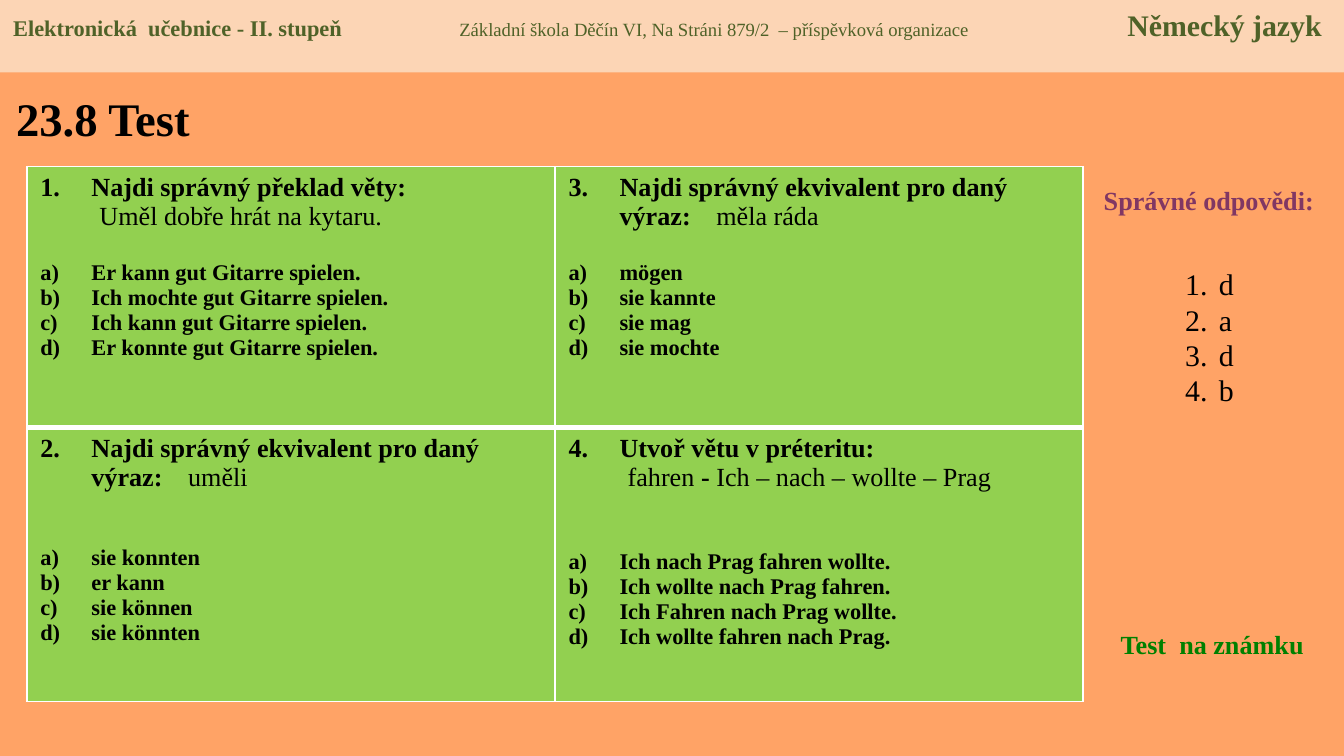
from lxml import etree
from pptx import Presentation
from pptx.dml.color import RGBColor
from pptx.enum.shapes import MSO_SHAPE
from pptx.enum.text import MSO_ANCHOR, PP_ALIGN
from pptx.oxml.ns import qn
from pptx.util import Inches, Pt

RECT = MSO_SHAPE.RECTANGLE
TOP, MID = MSO_ANCHOR.TOP, MSO_ANCHOR.MIDDLE
LEFT, CENTER = PP_ALIGN.LEFT, PP_ALIGN.CENTER

# Content
TITLE = "23.8 Test"
HEAD = ["Elektronická  učebnice - II. stupeň",
        "\tZákladní škola Děčín VI, Na Stráni 879/2  – příspěvková organizace",
        "\tNěmecký jazyk"]
KEY_HEAD = "Správné odpovědi:"
KEY = ["d", "a", "d", "b"]
NOTE = "Test  na známku"

# Each task: number, question, runs after it as (text, bold), on a new line,
# gap before the options in points, options
TASKS = [
    [(1, "Najdi správný překlad věty:",
      [("Uměl dobře hrát na kytaru.", False)], True, 16,
      ["Er kann gut Gitarre spielen.", "Ich mochte gut Gitarre spielen.",
       "Ich kann gut Gitarre spielen.", "Er konnte gut Gitarre spielen."]),
     (3, "Najdi správný ekvivalent pro daný výraz:",
      [("\tměla ráda", False)], False, 16,
      ["mögen", "sie kannte", "sie mag", "sie mochte"])],
    [(2, "Najdi správný ekvivalent pro daný výraz:",
      [("\tuměli", False)], False, 29,
      ["sie konnten", "er kann", "sie können", "sie könnten"]),
     (4, "Utvoř větu v préteritu:",
      [("fahren", False), (" - ", True),
       ("Ich – nach – wollte – Prag", False)], True, 31,
      ["Ich nach Prag fahren wollte.", "Ich wollte nach Prag fahren.",
       "Ich Fahren nach Prag wollte.", "Ich wollte fahren nach Prag."])],
]

THEME = {
    "font": "Times New Roman",
    "back": "FFA366", "band": "FCD5B5", "cell": "92D050", "line": "FFFFFF",
    "text": "000000", "head": "4F6228", "key": "813763", "note": "008000",
    "title": 25, "big": 16, "ask": 14, "small": 12, "tiny": 10,
}


def rgb(name):
    return RGBColor.from_string(THEME[name])


def write(frame, runs, size="ask", color="text", align=LEFT, gap=0,
          pitch=None, left=0, hang=0, num=None, start=1, tabs=()):
    """Add one paragraph; runs are (text, bold) or (text, bold, size)."""
    para = frame.paragraphs[0]
    if para.runs:
        para = frame.add_paragraph()
    para.alignment = align
    if gap:
        para.space_before = Pt(gap)
    if pitch:
        para.line_spacing = Pt(pitch)
    prop = para._p.get_or_add_pPr()
    if left:
        prop.set("marL", str(Inches(left)))
    if hang:
        prop.set("indent", str(Inches(-hang)))
    if num:
        mark = etree.SubElement(prop, qn("a:buAutoNum"), type=num)
        if start > 1:
            mark.set("startAt", str(start))
    if tabs:
        stops = etree.SubElement(prop, qn("a:tabLst"))
        for pos in tabs:
            etree.SubElement(stops, qn("a:tab"), pos=str(Inches(pos)), algn="l")
    for text, bold, *own in runs:
        run = para.add_run()
        run.text = text
        font = run.font
        font.name = THEME["font"]
        font.size = Pt(THEME[own[0] if own else size])
        font.bold = bold
        font.color.rgb = rgb(color)


def box(x, y, w, h):
    frame = slide.shapes.add_textbox(*map(Inches, (x, y, w, h))).text_frame
    frame.word_wrap = True
    return frame


def edge(cell, widths):
    prop = cell._tc.get_or_add_tcPr()
    for i, (side, width) in enumerate(zip("LRTB", widths)):
        line = etree.Element(qn("a:ln" + side), w=str(Pt(width)))
        fill = etree.SubElement(line, qn("a:solidFill"))
        etree.SubElement(fill, qn("a:srgbClr"), val=THEME["line"])
        prop.insert(i, line)


# Slide, 16 to 9
deck = Presentation()
deck.slide_width, deck.slide_height = Inches(10), Inches(10 * 9 / 16)
slide = deck.slides.add_slide(deck.slide_layouts[5])
slide.background.fill.solid()
slide.background.fill.fore_color.rgb = rgb("back")

# Title
title = slide.shapes.title
title.left, title.top, title.width, title.height = map(
    Inches, (0.02, 0.55, 3.19, 0.65))
title.text_frame.vertical_anchor = MID
write(title.text_frame, [(TITLE, True)], size="title")

# Answer key and note
write(box(8.05, 1.32, 1.89, 0.34), [(KEY_HEAD, True)], color="key", align=CENTER)
key = box(8.72, 1.65, 0.55, 1.99)
key.margin_top = Inches(0.33)
for item in KEY:
    write(key, [(item, False)], size="big", pitch=19,
          left=0.25, hang=0.25, num="arabicPeriod")
write(box(8.24, 4.63, 1.57, 0.34), [(NOTE, True)], color="note")

# Task table
grid = slide.shapes.add_table(
    2, 2, *map(Inches, (0.2, 1.24, 7.86, 3.98))).table
for row, high in zip(grid.rows, (1.94, 2.04)):
    row.height = Inches(high)
for r, line in enumerate(TASKS):
    for c, (start, ask, rest, split, gap, picks) in enumerate(line):
        cell = grid.cell(r, c)
        cell.fill.solid()
        cell.fill.fore_color.rgb = rgb("cell")
        edge(cell, (1, 1, 1, 3) if r == 0 else (1, 1, 3, 1))
        frame = cell.text_frame
        lead = [(ask, True)] if split else [(ask, True)] + rest
        write(frame, lead, left=0.38, hang=0.38, num="arabicPeriod",
              start=start, tabs=() if split else (1.1,))
        if split:
            write(frame, rest, left=0.44)
        for i, pick in enumerate(picks):
            write(frame, [(pick, True)], size="small", gap=0 if i else gap,
                  left=0.38, hang=0.38, num="alphaLcParenR")

# Header band
band = slide.shapes.add_shape(RECT, 0, 0, Inches(10), Inches(0.54))
band.shadow.inherit = False
band.fill.solid()
band.fill.fore_color.rgb = rgb("band")
band.line.fill.background()
band.text_frame.vertical_anchor = TOP
band.text_frame.word_wrap = True
write(band.text_frame,
      zip(HEAD, (True, False, True), ("small", "tiny", "big")),
      color="head", tabs=(3.32, 8.29))

deck.save("out.pptx")
